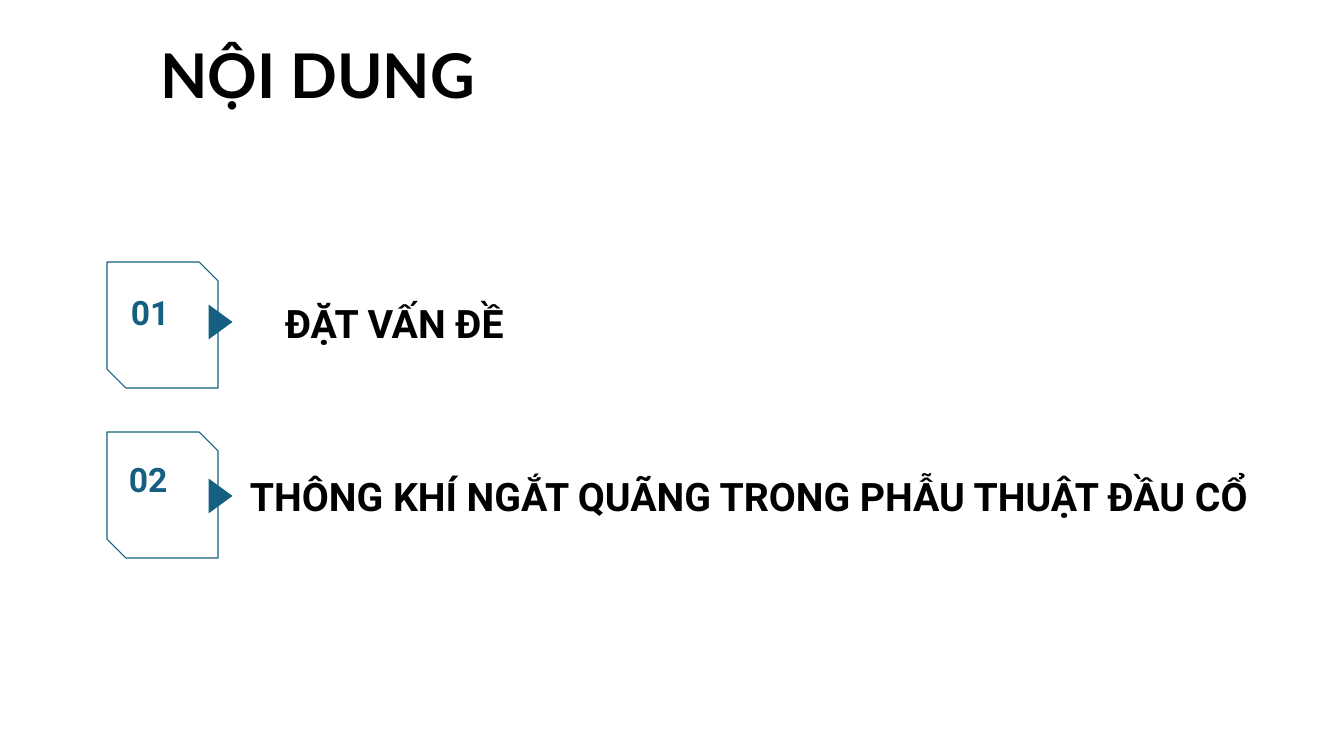
from pptx import Presentation
from pptx.dml.color import RGBColor
from pptx.enum.shapes import MSO_SHAPE
from pptx.enum.text import MSO_ANCHOR, MSO_AUTO_SIZE, PP_ALIGN
from pptx.util import Emu, Pt

COLORS = {"text": "000000", "accent": "156082"}
EMU_PER_PX = 914400 / 100.8


def px(*lengths):
    """Turn pixel lengths into EMU."""
    return [Emu(round(length * EMU_PER_PX)) for length in lengths]


def write(shape, text, font_name, size, color, inset=None):
    """Put one bold line in a shape; an inset in px also centres it vertically."""
    frame = shape.text_frame
    frame.word_wrap = True
    frame.auto_size = MSO_AUTO_SIZE.NONE
    if inset:
        frame.vertical_anchor = MSO_ANCHOR.MIDDLE
        frame.margin_left, frame.margin_top, frame.margin_right, frame.margin_bottom = px(*[inset] * 4)
    frame.text = text
    paragraph = frame.paragraphs[0]
    paragraph.alignment = PP_ALIGN.LEFT
    font = paragraph.font
    font.name, font.size, font.bold = font_name, Pt(size), True
    font.color.rgb = RGBColor.from_string(COLORS[color])


presentation = Presentation()
presentation.slide_width, presentation.slide_height = px(1344, 756)
slide = presentation.slides.add_slide(presentation.slide_layouts[5])
shapes = slide.shapes
accent = RGBColor.from_string(COLORS["accent"])

title = shapes.title
title.left, title.top, title.width, title.height = px(147, 43, 1052, 71)
write(title, "NỘI DUNG", "Lato", 44, "text", inset=13)
title.text_frame.paragraphs[0].line_spacing = 0.9

# number, heading, badge top, arrow top, number position, heading box
sections = [
    ("01", "ĐẶT VẤN ĐỀ", 262, 310, (121, 287), (272, 282, 627, 82)),
    ("02", "THÔNG KHÍ NGẮT QUÃNG TRONG PHẪU THUẬT ĐẦU CỔ", 432, 484, (119, 454), (237, 438, 1125, 115)),
]
for number, heading, badge_top, arrow_top, number_position, heading_box in sections:
    arrow = shapes.add_shape(MSO_SHAPE.ISOSCELES_TRIANGLE, *px(203, arrow_top, 35, 24))
    arrow.rotation = 90
    arrow.shadow.inherit = False
    arrow.fill.solid()
    arrow.fill.fore_color.rgb = accent
    arrow.line.fill.background()

    badge = shapes.add_shape(MSO_SHAPE.SNIP_2_DIAG_RECTANGLE, *px(107, badge_top, 111, 126))
    badge.adjustments[0], badge.adjustments[1] = 0, 0.17
    badge.shadow.inherit = False
    badge.fill.background()
    badge.line.color.rgb = accent
    badge.line.width = Pt(0.75)

    write(shapes.add_textbox(*px(*number_position, 86, 79)), number, "Roboto", 24, "accent")
    write(shapes.add_textbox(*px(*heading_box)), heading, "Roboto", 28, "text", inset=13)

presentation.save("out.pptx")
